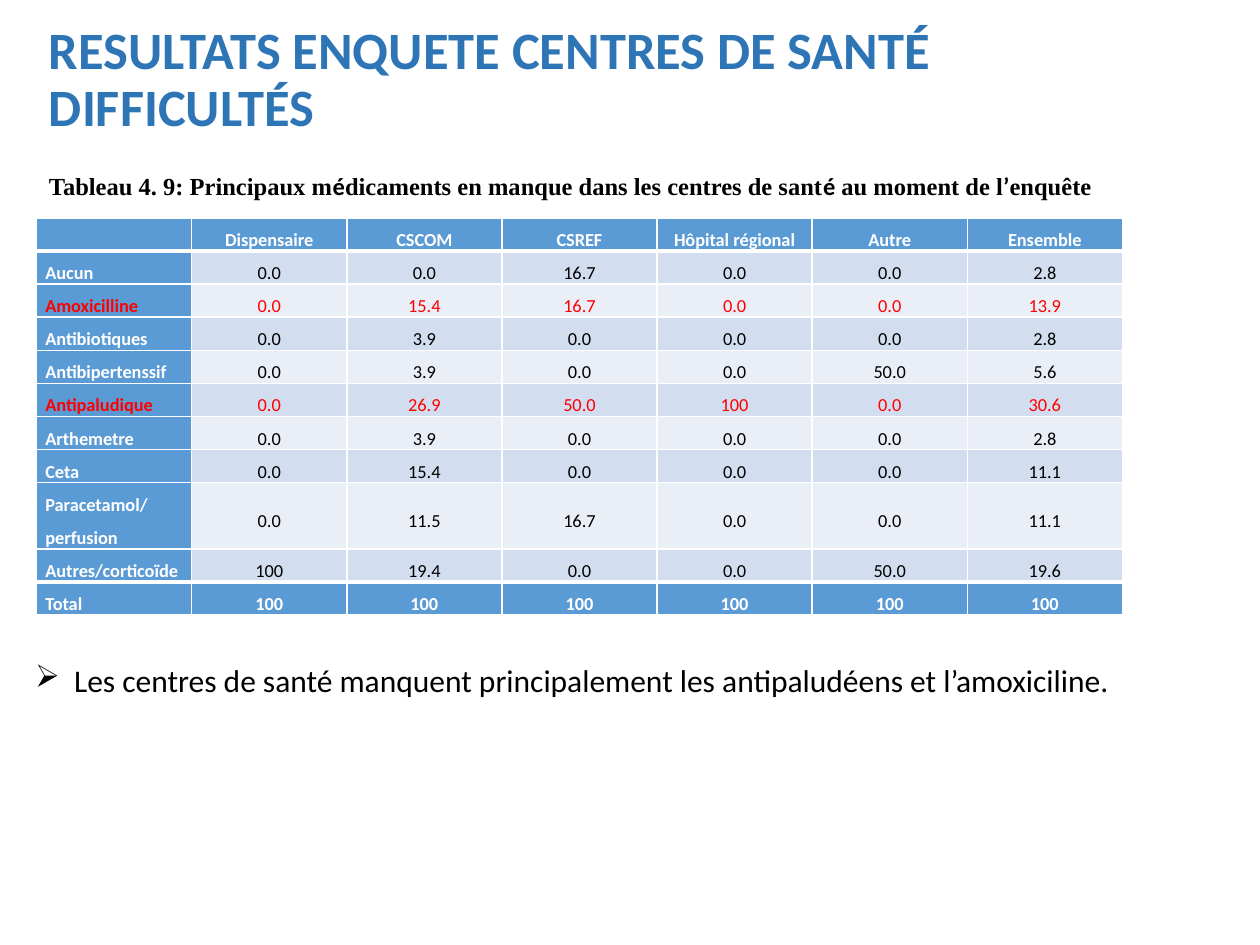
from lxml import etree
from pptx import Presentation
from pptx.dml.color import RGBColor
from pptx.enum.text import MSO_ANCHOR, PP_ALIGN
from pptx.oxml.ns import qn
from pptx.util import Inches, Pt

MIDDLE, TOP = MSO_ANCHOR.MIDDLE, MSO_ANCHOR.TOP
LEFT, CENTER, JUSTIFY = PP_ALIGN.LEFT, PP_ALIGN.CENTER, PP_ALIGN.JUSTIFY
SANS, SERIF = "Calibri", "Times New Roman"
BLUE, WHITE, BLACK, RED = "5B9BD5", "FFFFFF", "000000", "FF0000"
BANDS = "EAEFF7", "D2DEEF"

# Content
TITLE = "RESULTATS ENQUETE CENTRES DE SANTÉ\vDIFFICULTÉS"
# Pieces alternate between the serif and the sans font
CAPTION = ["Tableau 4. 9: Principaux m", "é",
           "dicaments en manque dans les centres de sant", "é",
           " au moment de l", "’", "enquête"]
NOTE = "Les centres de santé manquent principalement les antipaludéens et l’amoxiciline."
ROWS = [
    ["", "Dispensaire", "CSCOM", "CSREF", "Hôpital régional", "Autre", "Ensemble"],
    ["Aucun", "0.0", "0.0", "16.7", "0.0", "0.0", "2.8"],
    ["Amoxicilline", "0.0", "15.4", "16.7", "0.0", "0.0", "13.9"],
    ["Antibiotiques", "0.0", "3.9", "0.0", "0.0", "0.0", "2.8"],
    ["Antibipertenssif", "0.0", "3.9", "0.0", "0.0", "50.0", "5.6"],
    ["Antipaludique", "0.0", "26.9", "50.0", "100", "0.0", "30.6"],
    ["Arthemetre", "0.0", "3.9", "0.0", "0.0", "0.0", "2.8"],
    ["Ceta", "0.0", "15.4", "0.0", "0.0", "0.0", "11.1"],
    ["Paracetamol/perfusion", "0.0", "11.5", "16.7", "0.0", "0.0", "11.1"],
    ["Autres/corticoïde", "100", "19.4", "0.0", "0.0", "50.0", "19.6"],
    ["Total", "100", "100", "100", "100", "100", "100"],
]
MARKED = {"Amoxicilline", "Antipaludique"}


def color(code):
    return RGBColor.from_string(code)


def style(font, size, code, bold=False, face=SANS):
    font.name, font.size, font.bold = face, Pt(size), bold
    font.color.rgb = color(code)


def add_box(slide, left, top, width, height, anchor=TOP, wrap=True):
    box = slide.shapes.add_textbox(*map(Inches, (left, top, width, height)))
    frame = box.text_frame
    frame.word_wrap, frame.vertical_anchor = wrap, anchor
    return frame.paragraphs[0]


def add_edges(cell, widths):
    props = cell._tc.get_or_add_tcPr()
    for spot, (side, width) in enumerate(widths.items()):
        line = etree.Element(qn(f"a:ln{side}"), w=str(Pt(width)))
        fill = etree.SubElement(line, qn("a:solidFill"))
        etree.SubElement(fill, qn("a:srgbClr"), val=WHITE)
        props.insert(spot, line)


def fill_cell(cell, row, col):
    last = len(ROWS) - 1
    rim = row in (0, last)
    head = rim or col == 0
    cell.fill.solid()
    cell.fill.fore_color.rgb = color(BLUE if head else BANDS[row % 2])
    cell.margin_left = cell.margin_right = Inches(0.07)
    cell.margin_top = cell.margin_bottom = 0
    cell.vertical_anchor = MIDDLE if col else TOP
    cell.text = ROWS[row][col]
    para = cell.text_frame.paragraphs[0]
    para.alignment = CENTER if col else LEFT
    para.line_spacing, para.space_before = 1.5, Pt(2)
    ink = RED if ROWS[row][0] in MARKED else WHITE if head else BLACK
    style(para.font, 10.5, ink, head)
    # Thick rules set off the header and the total
    add_edges(cell, {"L": 1, "R": 1,
                     "T": 3 if row in (1, last) else 1,
                     "B": 3 if row in (0, last - 1) else 1})


def main():
    deck = Presentation()
    deck.slide_width, deck.slide_height = Inches(10), Inches(7.5)
    slide = deck.slides.add_slide(deck.slide_layouts[6])

    # Title
    para = add_box(slide, 0.29, 0.22, 9.42, 0.85, MIDDLE)
    para.text, para.line_spacing = TITLE, 0.9
    style(para.font, 30, "2E75B6", True)

    # Table caption
    para = add_box(slide, 0.29, 1.3, 8.53, 0.34, MIDDLE, False)
    for spot, piece in enumerate(CAPTION):
        run = para.add_run()
        run.text = piece
        style(run.font, 14, BLACK, True, (SERIF, SANS)[spot % 2])

    # Table
    rows, cols = len(ROWS), len(ROWS[0])
    table = slide.shapes.add_table(rows, cols, Inches(0.29), Inches(1.73),
                                   Inches(8.62), Inches(0.21 * rows)).table
    for row in range(rows):
        for col in range(cols):
            fill_cell(table.cell(row, col), row, col)

    # Conclusion with arrow bullet
    para = add_box(slide, 0.18, 5.2, 9.53, 0.4)
    para.text, para.alignment = NOTE, JUSTIFY
    props = para._p.get_or_add_pPr()
    props.set("marL", str(Inches(0.31)))
    props.set("indent", str(Inches(-0.31)))
    etree.SubElement(props, qn("a:buChar"), char="➢")
    style(para.font, 18, BLACK)

    deck.save("out.pptx")


if __name__ == "__main__":
    main()
